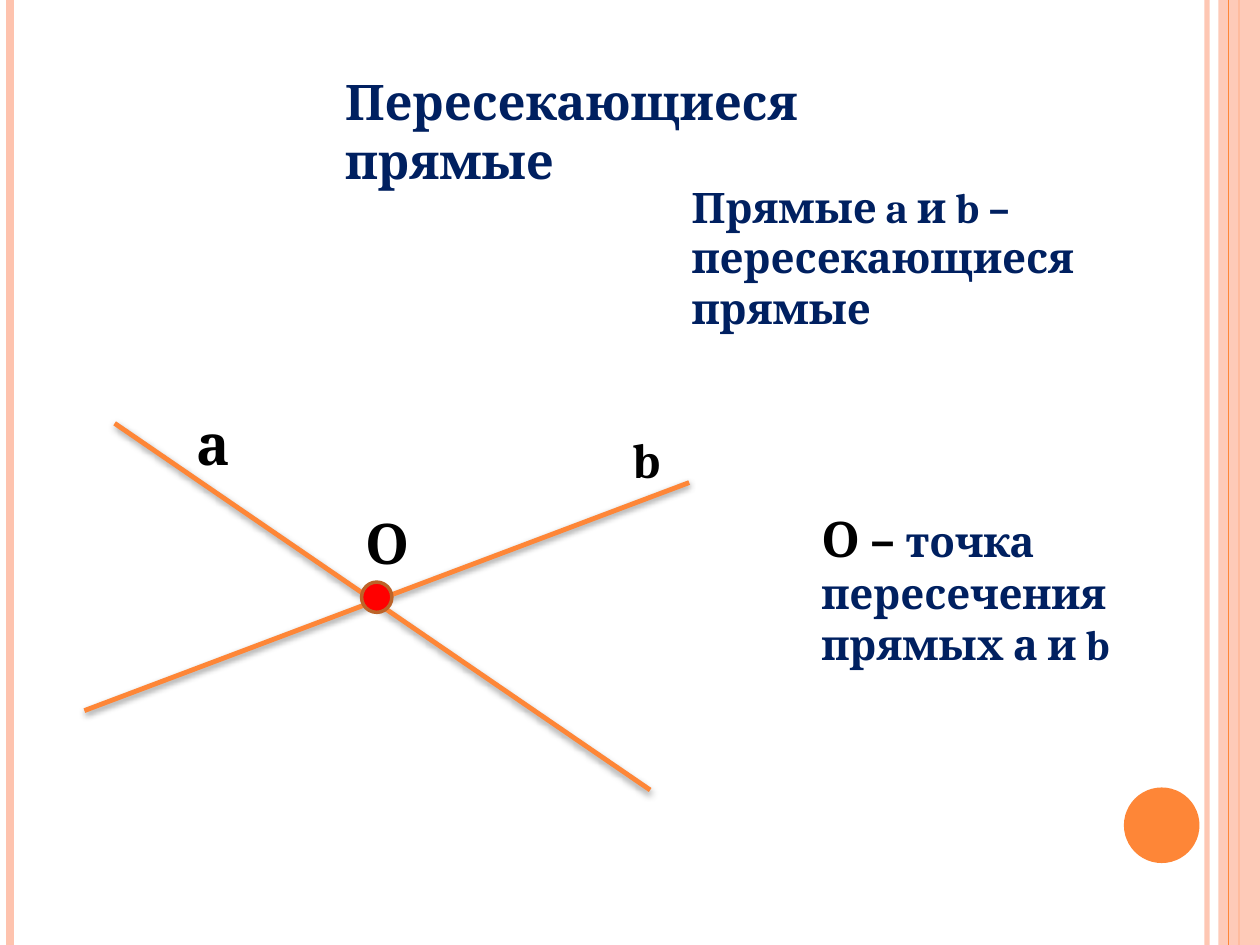
"""Build a geometry slide about two intersecting lines."""
from dataclasses import dataclass
from typing import Optional

from lxml.etree import SubElement
from pptx import Presentation
from pptx.dml.color import RGBColor
from pptx.enum.shapes import MSO_CONNECTOR, MSO_SHAPE
from pptx.enum.text import MSO_AUTO_SIZE
from pptx.oxml.ns import qn
from pptx.util import Inches, Pt

COLUMNS, ROWS = 10, 7.5
CELL = Inches(1)
ORANGE = RGBColor(0xFE, 0x86, 0x37)
PEACH = RGBColor(0xFE, 0xC3, 0xAE)
BROWN = RGBColor(0xBC, 0x63, 0x29)
RED = RGBColor(0xFF, 0x00, 0x00)
NAVY = RGBColor(0x00, 0x20, 0x60)
BLACK = RGBColor(0x00, 0x00, 0x00)


@dataclass(frozen=True)
class Line:
    start: tuple
    end: tuple
    color: RGBColor
    weight: float
    opacity: int = 100
    shadow: bool = False


@dataclass(frozen=True)
class Figure:
    kind: MSO_SHAPE
    area: tuple
    fill: RGBColor
    outline: Optional[RGBColor] = None
    opacity: int = 100


@dataclass(frozen=True)
class Span:
    text: str
    size: int
    color: RGBColor = BLACK


@dataclass(frozen=True)
class Caption:
    area: tuple
    spans: tuple
    wrap: bool = True


def edge(column: float, color: RGBColor, weight: float, opacity: int = 100) -> Line:
    """Describe a full-height vertical rule."""
    return Line((column, 0), (column, ROWS), color, weight, opacity)


LEFT_EDGES = (edge(9.58, PEACH, 3, 93), edge(0.08, PEACH, 4.5))
BAND_AXIS = edge(9.83, ORANGE, 1.5)
BAND = Figure(MSO_SHAPE.RECTANGLE, (9.67, 0, 0.33, ROWS), PEACH, opacity=87)
BAND_RULE = edge(9.75, ORANGE, 0.75)
DISC = Figure(MSO_SHAPE.OVAL, (8.92, 6.25, 0.6, 0.6), ORANGE)
LINE_B = Line((0.67, 5.64), (5.47, 3.83), ORANGE, 2.75, shadow=True)
LINE_A = Line((0.91, 3.36), (5.16, 6.27), ORANGE, 2.75, shadow=True)
POINT_O = Figure(MSO_SHAPE.FLOWCHART_CONNECTOR, (2.87, 4.62, 0.24, 0.24), RED, BROWN)
CAPTIONS = (
    Caption((2.64, 0.52, 4.65, 0.57), (Span("Пересекающиеся прямые", 28, NAVY),)),
    Caption((1.46, 3.2, 0.42, 0.64), (Span("а", 32),), wrap=False),
    Caption((4.92, 3.36, 0.35, 0.57), (Span("b", 28),)),
    Caption((2.8, 3.99, 0.51, 0.64), (Span("О", 32),), wrap=False),
    Caption((5.39, 1.39, 3.31, 1.31),
            (Span("Прямые a и b – пересекающиеся прямые", 24, NAVY),)),
    Caption((6.42, 3.99, 3.23, 1.38),
            (Span("О – ", 28), Span("точка пересечения прямых а и b", 24, NAVY))),
)


def cells(values: tuple) -> list:
    """Convert grid cells to lengths."""
    return [round(value * CELL) for value in values]


def set_all(target, values: dict) -> None:
    """Set every named attribute on the target."""
    for name, value in values.items():
        setattr(target, name, value)


def set_opacity(element, percent: int) -> None:
    """Make the first colour of an element partly transparent."""
    if percent < 100:
        color = next(element.iter(qn("a:srgbClr")))
        SubElement(color, qn("a:alpha"), val=str(percent * 1000))


def draw_line(page, line: Line):
    """Draw a straight connector, with a soft shadow if asked."""
    connector = page.shapes.add_connector(
        MSO_CONNECTOR.STRAIGHT, *cells(line.start + line.end))
    connector.line.color.rgb = line.color
    connector.line.width = Pt(line.weight)
    properties = connector._element.spPr
    set_opacity(properties, line.opacity)
    effects = SubElement(properties, qn("a:effectLst"))
    if line.shadow:
        shadow = SubElement(effects, qn("a:outerShdw"), blurRad=str(Pt(4)),
                            dist=str(Pt(1.6)), dir="5400000", rotWithShape="0")
        SubElement(shadow, qn("a:srgbClr"), val=str(BLACK))
        set_opacity(shadow, 42)
    return connector


def draw_figure(page, figure: Figure):
    """Draw a filled preset shape."""
    shape = page.shapes.add_shape(figure.kind, *cells(figure.area))
    shape.shadow.inherit = False
    shape.fill.solid()
    shape.fill.fore_color.rgb = figure.fill
    set_opacity(shape._element.spPr, figure.opacity)
    if figure.outline is None:
        shape.line.fill.background()
    else:
        shape.line.color.rgb = figure.outline
        shape.line.width = Pt(2)
    return shape


def draw_caption(page, caption: Caption) -> None:
    """Write one paragraph of bold spans."""
    box = page.shapes.add_textbox(*cells(caption.area))
    set_all(box.text_frame, {"word_wrap": caption.wrap,
                             "auto_size": MSO_AUTO_SIZE.SHAPE_TO_FIT_TEXT})
    para = box.text_frame.paragraphs[0]
    for span in caption.spans:
        run = para.add_run()
        run.text = span.text
        set_all(run.font, {"name": "Cambria", "size": Pt(span.size), "bold": True})
        run.font.color.rgb = span.color


def main() -> None:
    """Build and save the deck."""
    deck = Presentation()
    width, height = cells((COLUMNS, ROWS))
    set_all(deck, {"slide_width": width, "slide_height": height})
    page = deck.slides.add_slide(deck.slide_layouts[6])
    for line in LEFT_EDGES:
        draw_line(page, line)
    axis = draw_line(page, BAND_AXIS)
    band = draw_figure(page, BAND)
    axis.begin_connect(band, 0)
    axis.end_connect(band, 2)
    draw_line(page, BAND_RULE)
    draw_figure(page, DISC)
    for line in (LINE_B, LINE_A):
        draw_line(page, line)
    draw_figure(page, POINT_O)
    for caption in CAPTIONS:
        draw_caption(page, caption)
    deck.save("out.pptx")


if __name__ == "__main__":
    main()
